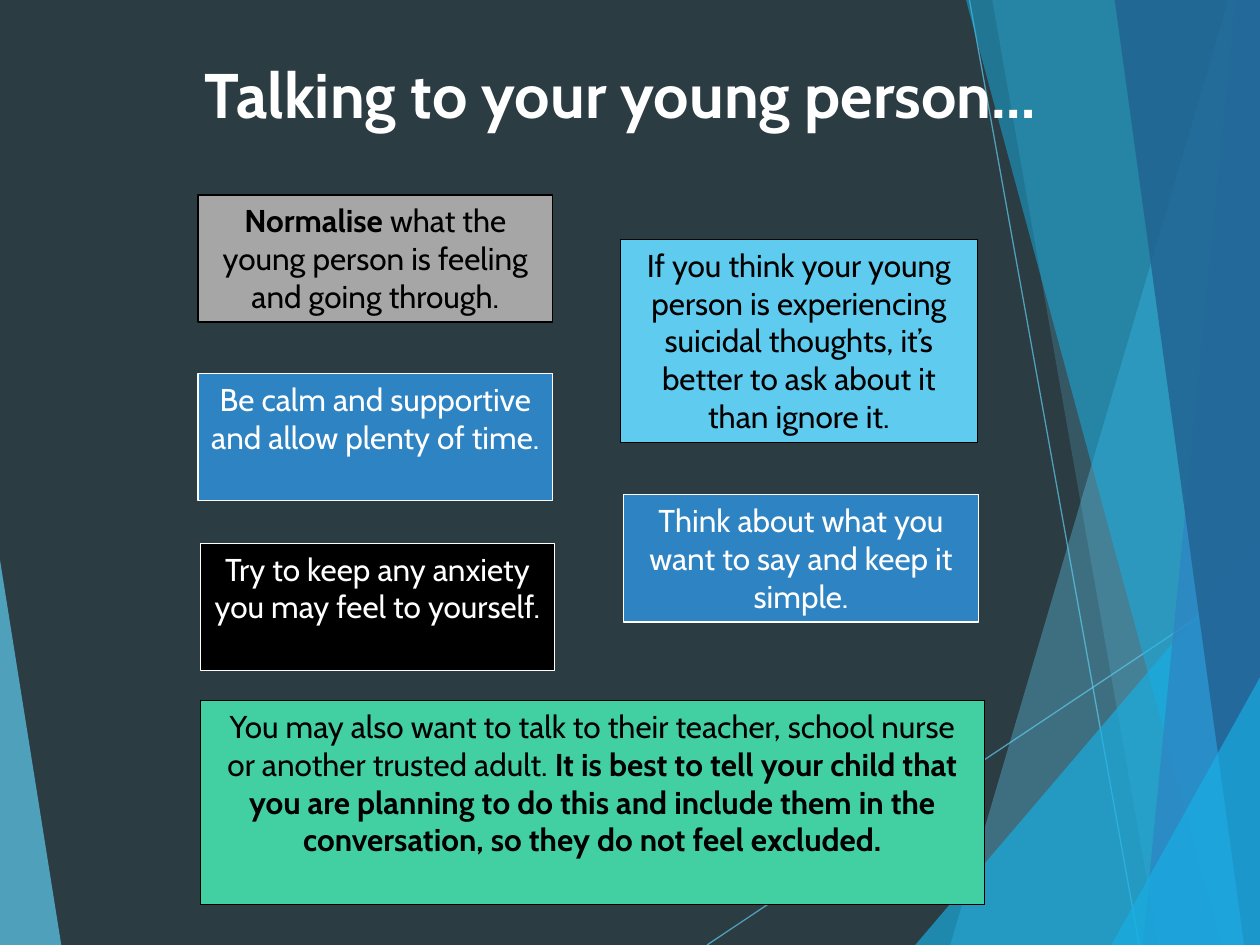
from dataclasses import dataclass

from lxml import etree
from pptx import Presentation
from pptx.dml.color import RGBColor
from pptx.enum import shapes, text
from pptx.oxml import ns
from pptx.util import Pt


@dataclass(frozen=True)
class Theme:
    font: str = "Cabin"
    title_size: int = 36
    body_size: int = 18
    line_width: float = 0.75
    background: str = "2C3C43"
    white: str = "FFFFFF"
    black: str = "000000"
    grey: str = "A6A6A6"
    sky: str = "5FCBEF"
    cyan: str = "17B0E4"
    blue: str = "2E83C3"
    navy: str = "226292"
    green: str = "42D0A2"


THEME = Theme()
WIDTH, HEIGHT = 720, 540

# Background facets: corner points, colour, opacity in percent
FACETS = [
    ([(0, 320), (35, HEIGHT), (0, HEIGHT)], THEME.sky, 70),
    ([(702, 0), (543, HEIGHT), (WIDTH, HEIGHT), (WIDTH, 0)], THEME.sky, 36),
    ([(567, 0), (662, HEIGHT), (WIDTH, HEIGHT), (WIDTH, 0)], THEME.sky, 20),
    ([(523, HEIGHT), (WIDTH, 309), (WIDTH, HEIGHT)], THEME.cyan, 66),
    ([(552, 0), (698, HEIGHT), (WIDTH, HEIGHT), (WIDTH, 0)], THEME.cyan, 50),
    ([(706, 0), (653, HEIGHT), (WIDTH, HEIGHT), (WIDTH, 0)], THEME.blue, 70),
    ([(637, 0), (711, HEIGHT), (WIDTH, HEIGHT), (WIDTH, 0)], THEME.navy, 82),
    ([(635, HEIGHT), (WIDTH, 387), (WIDTH, HEIGHT)], THEME.cyan, 66),
]
RAYS = [((404, HEIGHT), (WIDTH, 329)), ((554, 0), (651, HEIGHT))]

# Advice boxes: frame, fill, colour of text and outline, runs as (text, bold)
ADVICE = [
    ((114.5, 310.5, 202.5, 72.5), THEME.black, THEME.white,
     [("Try to keep any anxiety you may feel to yourself.", False)]),
    ((356.5, 282.75, 202.5, 72.75), THEME.blue, THEME.white,
     [("Think about what you want to say and keep it simple.", False)]),
    ((114.5, 400.5, 448, 116.5), THEME.green, THEME.black,
     [("You may also want to talk to their teacher, school nurse or another "
       "trusted adult. ", False),
      ("It is best to tell your child that you are planning to do this and "
       "include them in the conversation, so they do not feel excluded.", True)]),
    ((113.25, 213.5, 202.5, 72.5), THEME.blue, THEME.white,
     [("Be calm and supportive and allow plenty of time.", False)]),
    ((113.25, 111.5, 202.5, 72.5), THEME.grey, THEME.black,
     [("Normalise", True),
      (" what the young person is feeling and going through.", False)]),
    ((354.5, 137, 204, 116), THEME.sky, THEME.black,
     [("If you think your young person is experiencing suicidal thoughts, "
       "it’s better to ask about it than ignore it.", False)]),
]


def set_color(color_format, value, opacity=100):
    color_format.rgb = RGBColor.from_string(value)
    if opacity < 100:
        color = color_format._xFill.find(ns.qn("a:srgbClr"))
        etree.SubElement(color, ns.qn("a:alpha"), val=str(opacity * 1000))


def set_fill(fill, value, opacity=100):
    fill.solid()
    set_color(fill.fore_color, value, opacity)


def add_run(paragraph, words, *, size, color, bold=False):
    run = paragraph.add_run()
    run.text = words
    run.font.name = THEME.font
    run.font.size = Pt(size)
    run.font.bold = bold
    run.font.color.rgb = RGBColor.from_string(color)


def write_text(shape, runs, *, size, color):
    frame = shape.text_frame
    frame.word_wrap = True
    frame.auto_size = text.MSO_AUTO_SIZE.NONE
    frame.vertical_anchor = text.MSO_ANCHOR.TOP
    paragraph = frame.paragraphs[0]
    paragraph.alignment = text.PP_ALIGN.CENTER
    for words, bold in runs:
        add_run(paragraph, words, size=size, color=color, bold=bold)


def add_facet(slide, points, color, opacity):
    corners = [(Pt(x), Pt(y)) for x, y in points]
    builder = slide.shapes.build_freeform(*corners[0])
    builder.add_line_segments(corners[1:], close=True)
    shape = builder.convert_to_shape()
    shape.shadow.inherit = False
    shape.line.fill.background()
    set_fill(shape.fill, color, opacity)


def add_ray(slide, start, end):
    connector = slide.shapes.add_connector(
        shapes.MSO_CONNECTOR.STRAIGHT, *(Pt(v) for v in (*start, *end)))
    connector.line.width = Pt(THEME.line_width)
    set_fill(connector.line.fill, THEME.sky, 70)
    etree.SubElement(connector._element.spPr, ns.qn("a:effectLst"))


def add_title(slide, words):
    title = slide.shapes.title
    title.left, title.top, title.width, title.height = (
        Pt(v) for v in (20, 28, 669, 73))
    write_text(title, [(words, True)], size=THEME.title_size, color=THEME.white)
    # Bring the title in front of the background
    slide.shapes._spTree.append(title._element)


def add_advice(slide, frame, fill, color, runs):
    shape = slide.shapes.add_shape(
        shapes.MSO_SHAPE.RECTANGLE, *(Pt(v) for v in frame))
    shape.shadow.inherit = False
    set_fill(shape.fill, fill)
    set_fill(shape.line.fill, color)
    shape.line.width = Pt(THEME.line_width)
    write_text(shape, runs, size=THEME.body_size, color=color)


def main():
    presentation = Presentation()
    presentation.slide_width, presentation.slide_height = Pt(WIDTH), Pt(HEIGHT)
    slide = presentation.slides.add_slide(presentation.slide_layouts[5])

    # Background
    set_fill(slide.background.fill, THEME.background)
    add_facet(slide, *FACETS[0])
    for ray in RAYS:
        add_ray(slide, *ray)
    for facet in FACETS[1:]:
        add_facet(slide, *facet)

    # Content
    add_title(slide, "Talking to your young person…")
    for advice in ADVICE:
        add_advice(slide, *advice)

    presentation.save("out.pptx")


if __name__ == "__main__":
    main()
